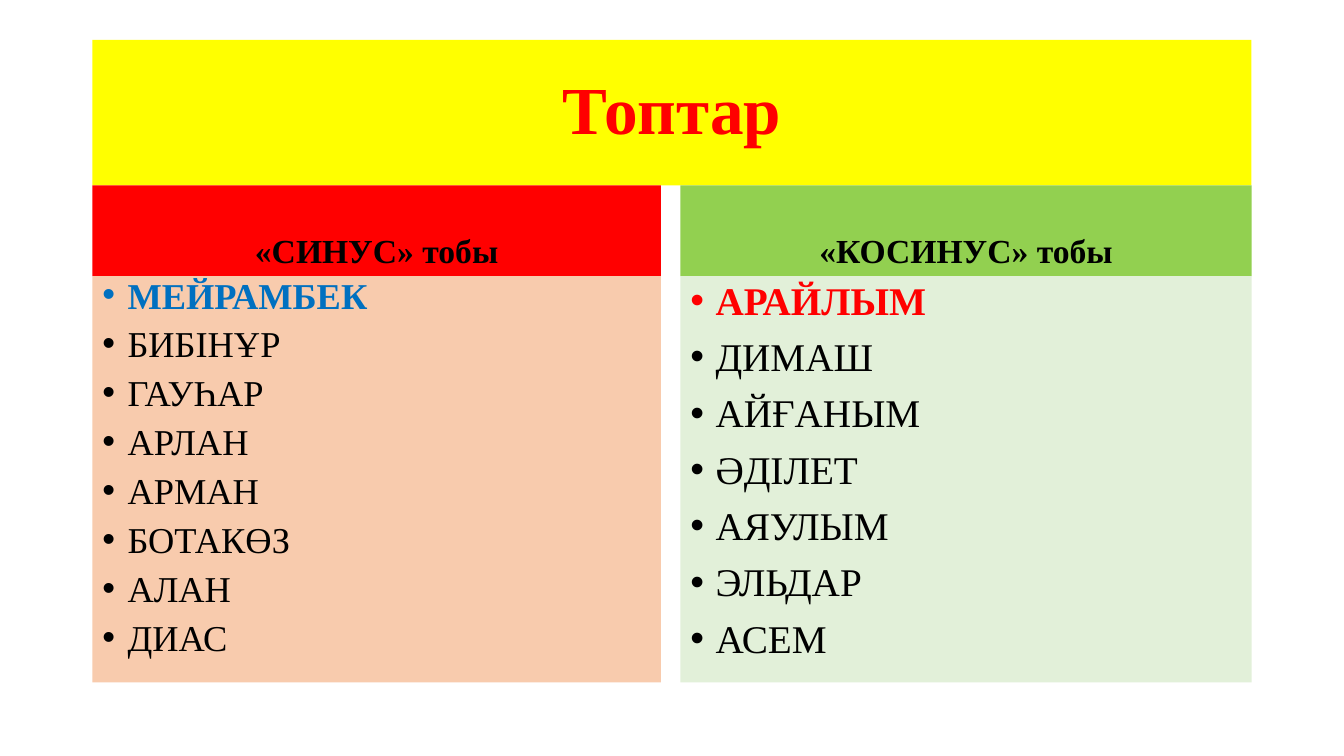
from lxml.etree import SubElement
from pptx import Presentation
from pptx.dml.color import RGBColor
from pptx.enum.shapes import MSO_SHAPE
from pptx.enum.text import MSO_ANCHOR, PP_ALIGN
from pptx.oxml.ns import qn
from pptx.util import Pt

FONT = "Times New Roman"
BLACK = "000000"
TITLE = {"text": "Топтар", "fill": "FFFF00", "color": "FF0000", "size": 48}
GROUPS = [
    {
        "name": "«СИНУС» тобы", "left": 66, "width": 406,
        "head_fill": "FF0000", "list_fill": "F8CBAD", "leader_color": "0070C0",
        "size": 26, "line_spacing": 0.8,
        "members": ["МЕЙРАМБЕК", "БИБІНҰР", "ГАУҺАР", "АРЛАН",
                    "АРМАН", "БОТАКӨЗ", "АЛАН", "ДИАС"],
    },
    {
        "name": "«КОСИНУС» тобы", "left": 486, "width": 408,
        "head_fill": "92D050", "list_fill": "E2F0D9", "leader_color": "FF0000",
        "size": 28, "line_spacing": 0.9,
        "members": ["АРАЙЛЫМ", "ДИМАШ", "АЙҒАНЫМ", "ӘДІЛЕТ",
                    "АЯУЛЫМ", "ЭЛЬДАР", "АСЕМ"],
    },
]
TITLE_TOP, HEAD_TOP, LIST_TOP, LIST_BOTTOM = 28.5, 132.5, 197.25, 487.5
BULLET_INDENT = 18


def rgb(value):
    return RGBColor.from_string(value)


def add_panel(left, top, width, bottom, fill, anchor):
    box = slide.shapes.add_shape(
        MSO_SHAPE.RECTANGLE, Pt(left), Pt(top), Pt(width), Pt(bottom - top))
    box.shadow.inherit = False
    box.fill.solid()
    box.fill.fore_color.rgb = rgb(fill)
    box.line.fill.background()
    box.text_frame.word_wrap = True
    box.text_frame.vertical_anchor = anchor
    return box.text_frame


def write(para, text, size, color, bold=True, **layout):
    span = para.add_run()
    span.text = text
    span.font.color.rgb = rgb(color)
    for name, value in {"name": FONT, "size": Pt(size), "bold": bold}.items():
        setattr(span.font, name, value)
    defaults = {"alignment": PP_ALIGN.CENTER, "line_spacing": 0.9}
    for name, value in {**defaults, **layout}.items():
        setattr(para, name, value)


def add_bullet(para):
    properties = para._p.get_or_add_pPr()
    properties.set("marL", str(Pt(BULLET_INDENT)))
    properties.set("indent", str(-Pt(BULLET_INDENT)))
    SubElement(properties, qn("a:buFont"), typeface="Arial")
    SubElement(properties, qn("a:buChar"), char="•")


deck = Presentation()
deck.slide_width, deck.slide_height = Pt(960), Pt(540)
slide = deck.slides.add_slide(deck.slide_layouts[6])

first, last = GROUPS[0], GROUPS[-1]
title_width = last["left"] + last["width"] - first["left"]
frame = add_panel(first["left"], TITLE_TOP, title_width, HEAD_TOP,
                  TITLE["fill"], MSO_ANCHOR.MIDDLE)
write(frame.paragraphs[0], TITLE["text"], TITLE["size"], TITLE["color"])

for group in GROUPS:
    left, width = group["left"], group["width"]
    frame = add_panel(left, HEAD_TOP, width, LIST_TOP,
                      group["head_fill"], MSO_ANCHOR.BOTTOM)
    write(frame.paragraphs[0], group["name"], 24, BLACK, space_before=Pt(10))

    frame = add_panel(left, LIST_TOP, width, LIST_BOTTOM,
                      group["list_fill"], MSO_ANCHOR.TOP)
    for index, member in enumerate(group["members"]):
        leader = index == 0
        para = frame.paragraphs[0] if leader else frame.add_paragraph()
        write(para, member, group["size"],
              group["leader_color"] if leader else BLACK, bold=leader,
              alignment=PP_ALIGN.LEFT, space_before=Pt(10),
              line_spacing=group["line_spacing"])
        add_bullet(para)

deck.save("out.pptx")
